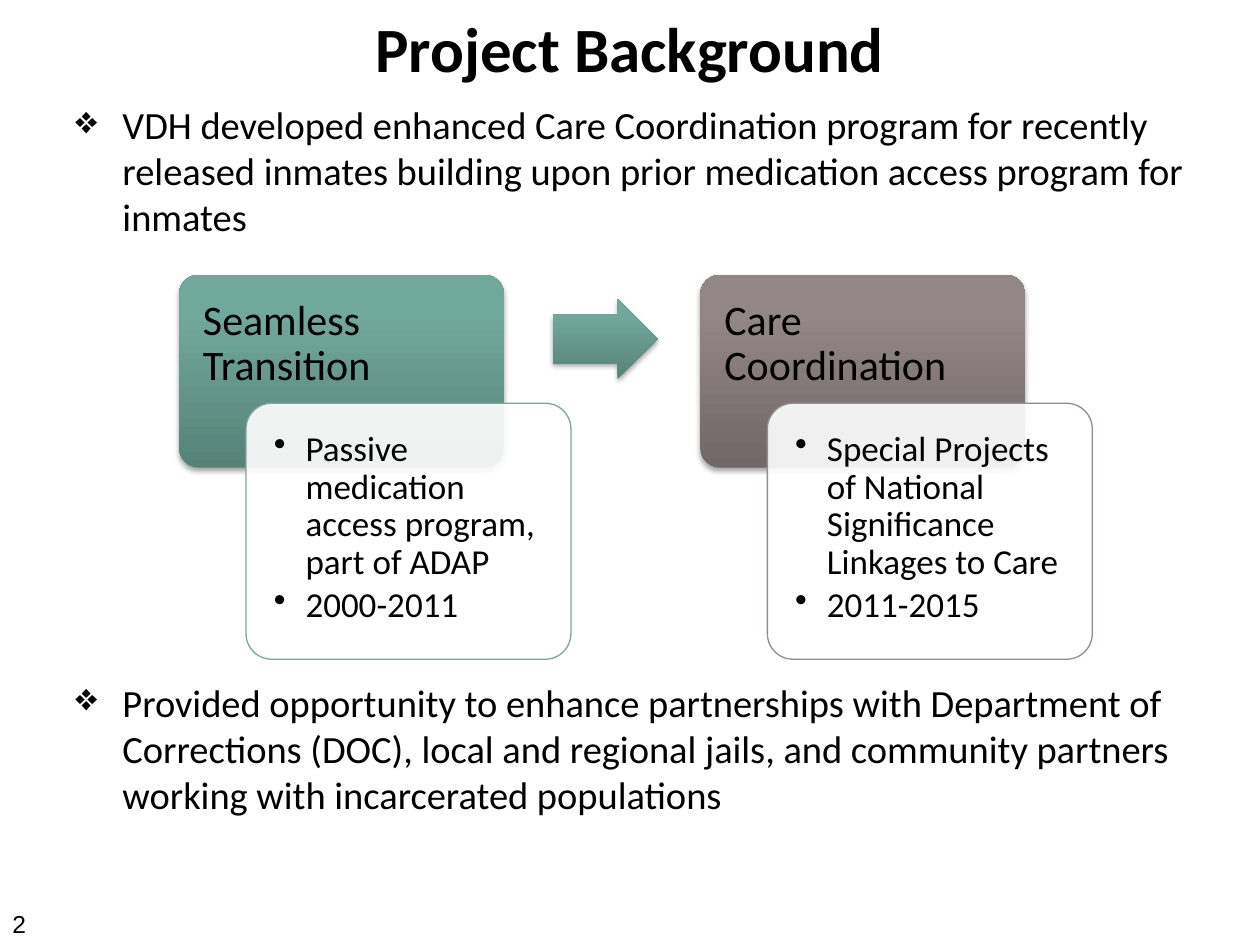
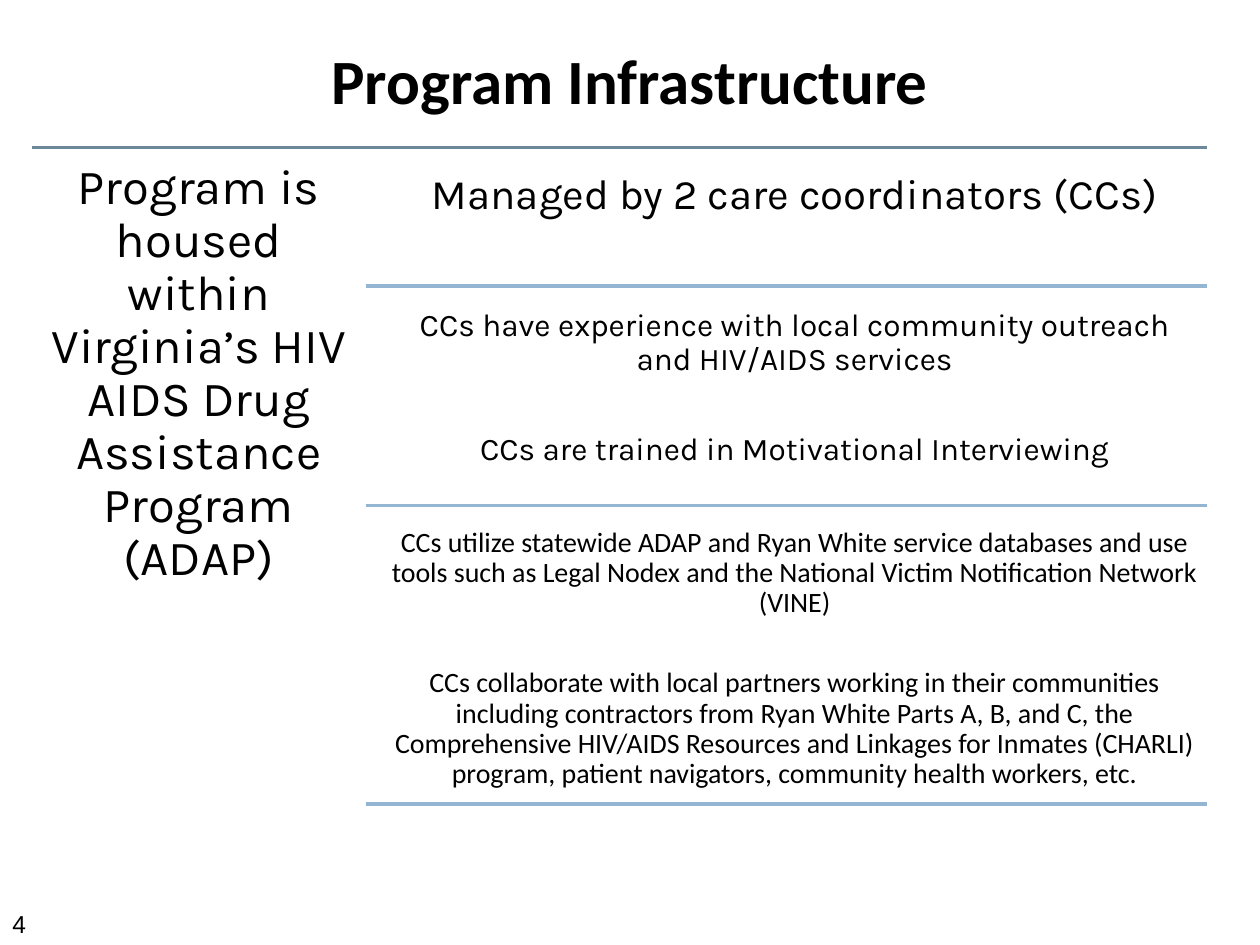
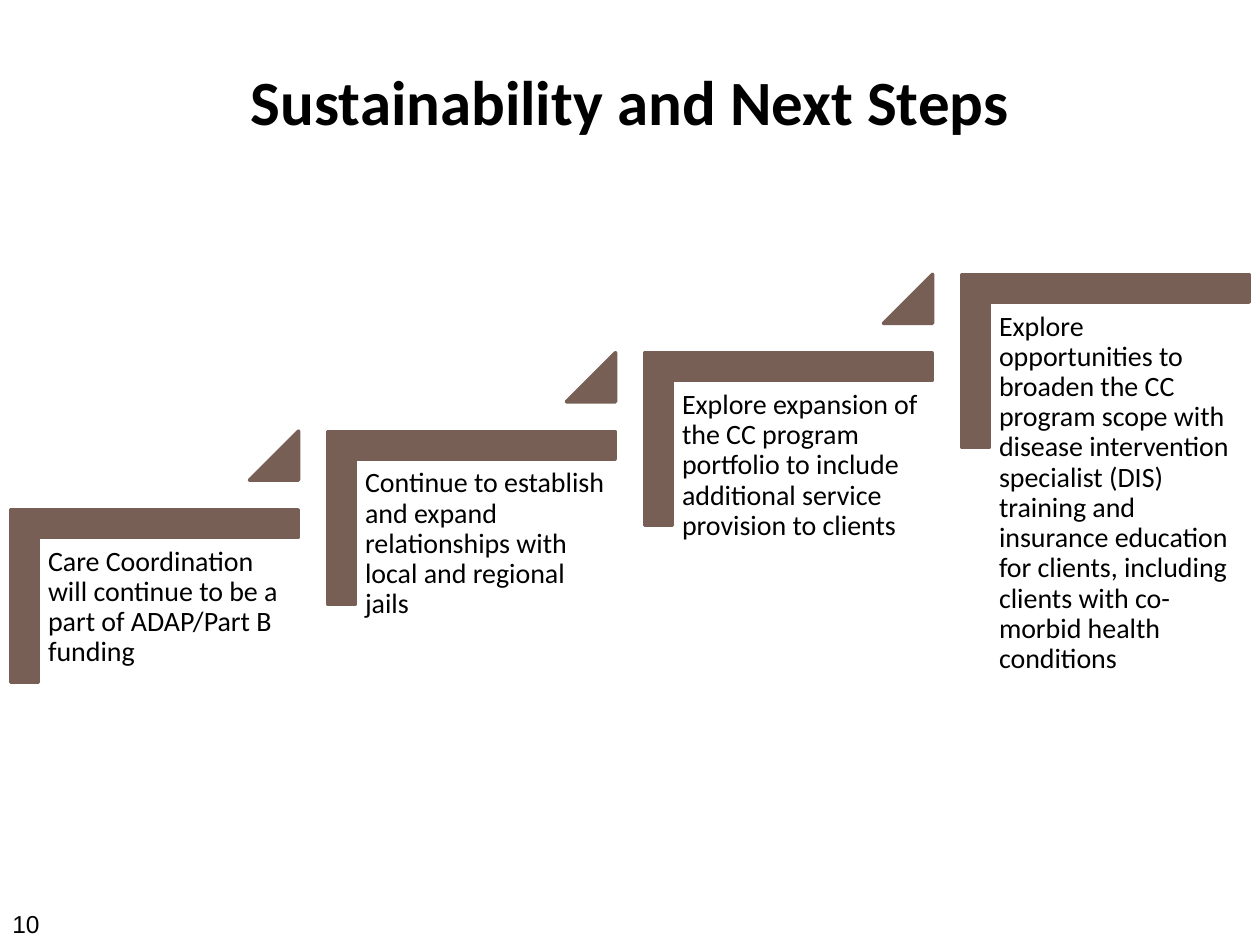
from pptx import Presentation
from pptx import util as u
from pptx.dml.color import RGBColor
from pptx.enum import shapes, text
from pptx.oxml.xmlchemy import OxmlElement

INK = {
    "text": "000000", "white": "FFFFFF", "brown": "775F55",
    "rule": "94B6D2", "top": "6D879B",
    "green": "71A89C", "green low": "578278", "green line": "7BA79D",
    "grey": "938686", "grey low": "716767", "grey line": "968C8C",
}
FONT, ALT = "Calibri", "Karla"
KIND = shapes.MSO_SHAPE
MID = text.PP_ALIGN.CENTER


def ink(name):
    return RGBColor.from_string(INK[name])


def cm(*nums):
    return [u.Cm(n) for n in nums]


def node(home, tag, **attrs):
    """Append an XML element to home and return it."""
    item = OxmlElement(tag)
    for key, val in attrs.items():
        item.set(key, str(val))
    home.append(item)
    return item


def write(para, words, size, font=FONT, bold=False):
    run = para.add_run()
    run.text = words
    run.font.size, run.font.name, run.font.bold = u.Pt(size), font, bold
    run.font.color.rgb = ink("text")


def fill(shape, lines, size, font=FONT, pad=None, line=0.9, gap=0,
         align=text.PP_ALIGN.LEFT, mark=None, dent=0):
    """Write one paragraph per line, with gap points between them."""
    frame = shape.text_frame
    frame.word_wrap = True
    frame.vertical_anchor = text.MSO_ANCHOR.TOP
    if pad is not None:
        frame.margin_left = frame.margin_right = u.Cm(pad)
        frame.margin_top = frame.margin_bottom = u.Cm(pad)
    for i, words in enumerate(lines):
        para = frame.add_paragraph() if i else frame.paragraphs[0]
        if mark:
            props = para._p.get_or_add_pPr()
            props.set("marL", str(u.Cm(dent)))
            props.set("indent", str(-u.Cm(dent)))
            node(props, "a:buChar", char=mark)
        para.alignment, para.line_spacing = align, line
        if i:
            para.space_before = u.Pt(gap)
        write(para, words, size, font)


def label(slide, at, lines, size, **style):
    fill(slide.shapes.add_textbox(*cm(*at)), lines, size, **style)


def page(deck, name, at, num):
    """Add a slide with its title and page number."""
    slide = deck.slides.add_slide(deck.slide_layouts[5])
    title = slide.shapes.title
    title.left, title.top, title.width, title.height = cm(*at)
    title.text_frame.vertical_anchor = text.MSO_ANCHOR.MIDDLE
    para = title.text_frame.paragraphs[0]
    para.alignment = MID
    write(para, name, 36, bold=True)
    label(slide, (0, 18.21, 5.92, 0.64), [num], 14, font="Arial", line=1)
    return slide


def block(slide, kind, at, adj, tint, edge=None, width=0):
    shape = slide.shapes.add_shape(kind, *cm(*at))
    for i, val in enumerate(adj):
        shape.adjustments[i] = val
    shape.shadow.inherit = False
    shape.fill.solid()
    shape.fill.fore_color.rgb = ink(tint)
    if edge:
        shape.line.color.rgb = ink(edge)
        shape.line.width = u.Pt(width)
    else:
        shape.line.fill.background()
    return shape


def raised(slide, kind, at, adj, tint):
    """Add a block with a gradient and a soft shadow below."""
    shape = block(slide, kind, at, adj, tint)
    shape.fill.gradient()
    shape.fill.gradient_angle = 90
    low, high = shape.fill.gradient_stops
    low.color.rgb, low.position = ink(tint + " low"), 0
    high.color.rgb, high.position = ink(tint), 0.8
    effect = shape._element.spPr.find(".//{*}effectLst")
    shade = node(effect, "a:outerShdw", blurRad=u.Pt(3.1), dist=u.Pt(1.8),
                 dir=5400000, rotWithShape=0)
    node(node(shade, "a:srgbClr", val=INK["text"]), "a:alpha", val=35000)
    return shape


def card(slide, x, tint, head, facts):
    wide, y = 6.55, 5.54
    back = raised(slide, KIND.ROUNDED_RECTANGLE, (x, y, wide, 3.89), [0.1], tint)
    fill(back, [head], 24, pad=0.37)
    front = block(slide, KIND.ROUNDED_RECTANGLE, (x + 1.35, y + 2.59, wide, 5.16),
                  [0.1], "white", tint + " line", 0.75)
    tone = front._element.spPr.find("{*}solidFill/{*}srgbClr")
    node(tone, "a:alpha", val=90000)
    fill(front, facts, 20, pad=0.41, gap=3, mark="•", dent=0.64)


def rule(slide, x, y, tint):
    line = slide.shapes.add_connector(
        shapes.MSO_CONNECTOR.STRAIGHT, *cm(x, y, 24.33, y))
    line.line.color.rgb = ink(tint)
    line.line.width = u.Pt(2)
    node(line._element.spPr, "a:effectLst")


def step(slide, x, y, words, last):
    """Add a stair step; all but the last lead on with a triangle."""
    angle = block(slide, KIND.CORNER, (x, y, 3.48, 5.79), [0.161, 0.161],
                  "brown", "brown", 2)
    angle.rotation = 90
    label(slide, (x - 0.58, y + 1.73, 5.23, 4.57), [words], 16, pad=0.18)
    if not last:
        block(slide, KIND.ISOSCELES_TRIANGLE, (x + 3.66, y - 0.43, 0.99, 0.99),
              [1], "brown", "brown", 2)


def background(deck):
    slide = page(deck, "Project Background", (1.9, -0.64, 21.59, 3.18), "2")
    label(slide, (1.27, 1.91, 22.86, 14.6), [
        "VDH developed enhanced Care Coordination program for recently released "
        "inmates building upon prior medication access program for inmates",
        "Provided opportunity to enhance partnerships with Department of "
        "Corrections (DOC), local and regional jails, and community partners "
        "working with incarcerated populations",
    ], 22, line=1, gap=251, mark="❖", dent=0.95)
    card(slide, 3.61, "green", "Seamless Transition",
         ["Passive medication access program, part of ADAP", "2000-2011"])
    raised(slide, KIND.RIGHT_ARROW, (11.15, 6.02, 2.11, 1.63), [0.6, 0.5], "green")
    card(slide, 14.12, "grey", "Care Coordination",
         ["Special Projects of National Significance Linkages to Care",
          "2011-2015"])


def program(deck):
    slide = page(deck, "Program Infrastructure", (1.9, 0, 21.59, 3.18), "4")
    top = 2.97
    rule(slide, 0.64, top, "top")
    label(slide, (0.64, top, 6.73, 13.54),
          ["Program is housed within Virginia’s HIV AIDS Drug Assistance "
           "Program (ADAP)"], 28, font=ALT, pad=0.3, align=MID)
    rows = [
        (5.77, 24, ALT, 0.25, ["Managed by 2 care coordinators (CCs)"]),
        (10.19, 18, ALT, 0.18, [
            "CCs have experience with local community outreach and HIV/AIDS "
            "services",
            "CCs are trained in Motivational Interviewing"]),
        (16.21, 16, FONT, 0.18, [
            "CCs utilize statewide ADAP and Ryan White service databases and use "
            "tools such as Legal Nodex and the National Victim Notification "
            "Network (VINE)",
            "CCs collaborate with local partners working in their communities "
            "including contractors from Ryan White Parts A, B, and C, the "
            "Comprehensive HIV/AIDS Resources and Linkages for Inmates (CHARLI) "
            "program, patient navigators, community health workers, etc."]),
    ]
    for end, size, font, pad, lines in rows:
        y = top + 0.28
        label(slide, (7.7, y, 16.64, end - y), lines, size, font=font,
              pad=pad, gap=1.78 * size, align=MID)
        rule(slide, 7.37, end, "rule")
        top = end


def future(deck):
    slide = page(deck, "Sustainability and Next Steps",
                 (1.27, 0.43, 22.86, 3.18), "10")
    steps = [
        "Care Coordination will continue to be a part of ADAP/Part B funding",
        "Continue to establish and expand relationships with local and regional "
        "jails",
        "Explore expansion of the CC program portfolio to include additional "
        "service provision to clients",
        "Explore opportunities to broaden the CC program scope with disease "
        "intervention specialist (DIS) training and insurance education for "
        "clients, including clients with co-morbid health conditions",
    ]
    for i, words in enumerate(steps):
        step(slide, 1.37 + 6.39 * i, 9.12 - 1.58 * i, words,
             i == len(steps) - 1)


def main():
    deck = Presentation()
    deck.slide_width, deck.slide_height = cm(25.4, 19.05)
    background(deck)
    program(deck)
    future(deck)
    deck.save("out.pptx")


if __name__ == "__main__":
    main()
